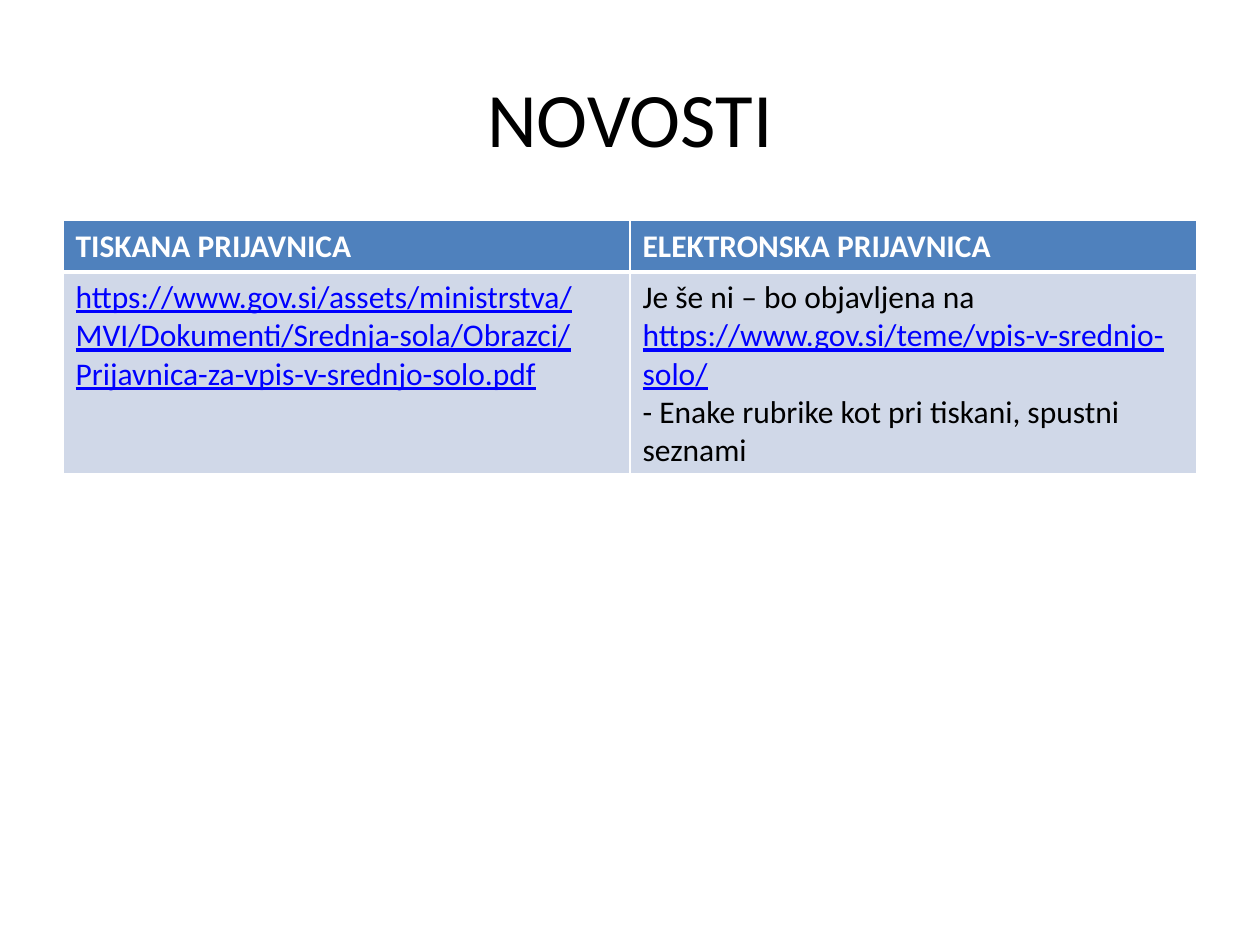
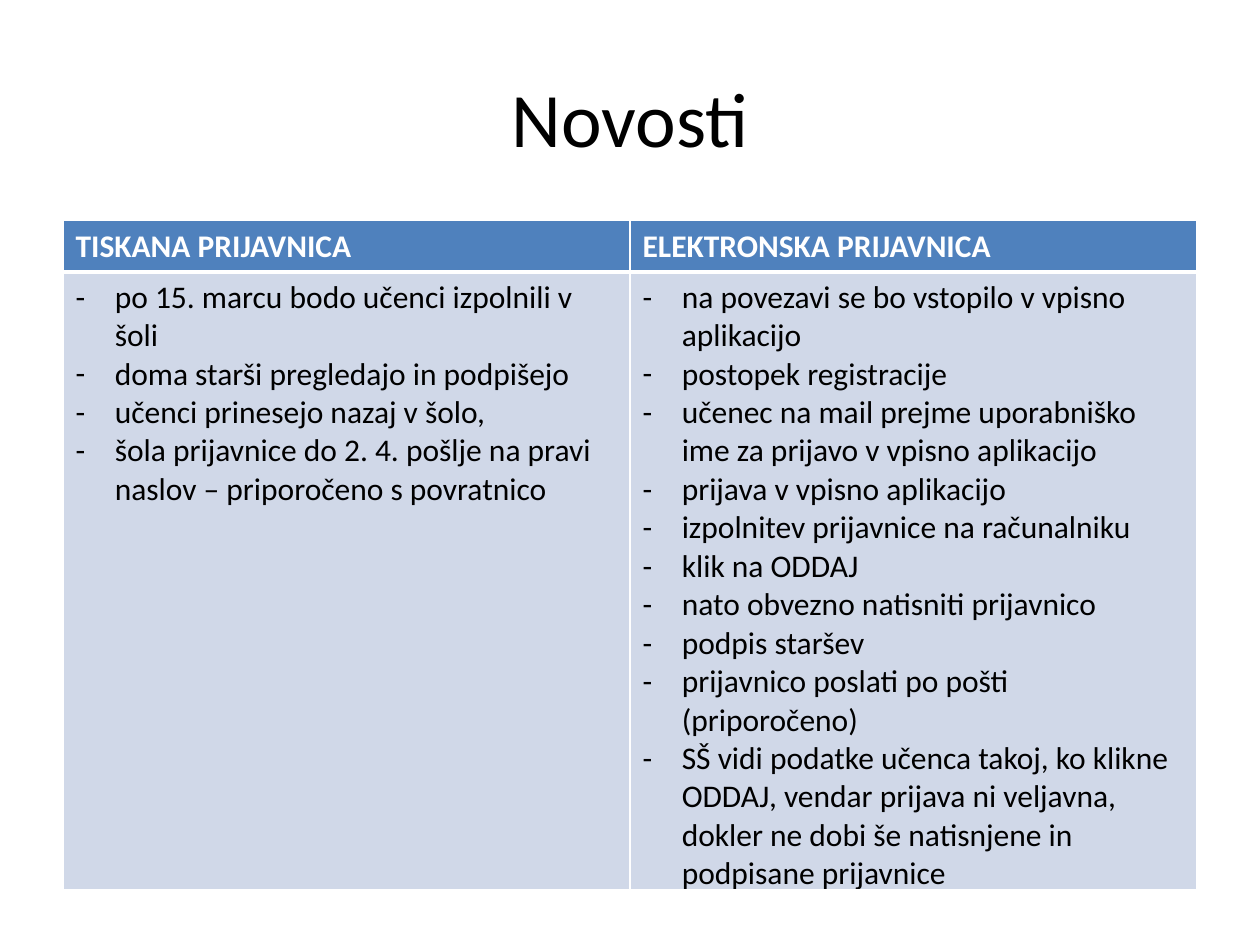
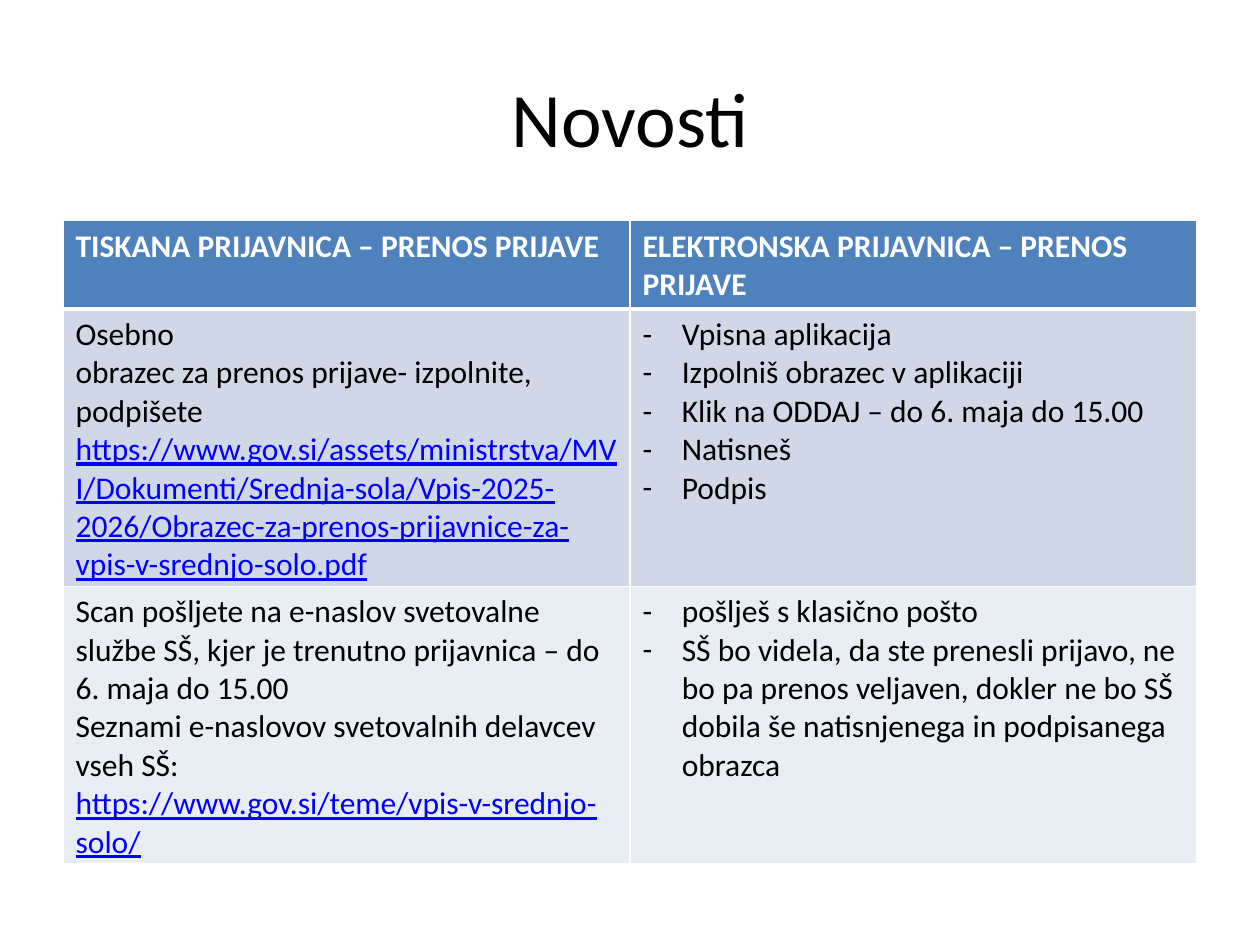
from dataclasses import dataclass

from lxml import etree
from pptx import Presentation
from pptx import util as u
from pptx.dml.color import RGBColor
from pptx.enum import text
from pptx.oxml import ns


@dataclass(frozen=True)
class Theme:
    font: str = "Calibri"
    title_size: float = 44
    body_size: float = 18
    ink: str = "000000"
    white: str = "FFFFFF"
    link: str = "0000FF"
    header: str = "4F81BD"
    bands: tuple[str, ...] = ("D0D8E8", "E9EDF4")
    thin: float = 1
    thick: float = 3


@dataclass(frozen=True)
class Line:
    """One paragraph: plain words, then an optional web address."""
    words: str = ""
    link: str = ""
    bullet: bool = False


@dataclass(frozen=True)
class Page:
    title: str
    headers: tuple[str, ...]
    rows: tuple[tuple[list[Line], ...], ...]


THEME = Theme()

# Shared layout
SLIDE_W, SLIDE_H = u.Cm(25.4), u.Cm(19.05)
LEFT, WIDTH = u.Cm(1.27), u.Cm(22.86)
TITLE_TOP, TITLE_H = u.Cm(0.76), u.Cm(3.18)
TABLE_TOP, ROW_H = u.Cm(4.45), u.Cm(1.03)
INDENT = u.Cm(0.79)


def bullets(*items: str) -> list[Line]:
    return [Line(item, bullet=True) for item in items]


# Content
SITE = "https://www.gov.si/"
FORMS = SITE + "assets/ministrstva/MVI/Dokumenti/Srednja-sola/"
ENROLMENT = SITE + "teme/vpis-v-srednjo-solo/"
PRINTED, ELECTRONIC = "TISKANA PRIJAVNICA", "ELEKTRONSKA PRIJAVNICA"
TRANSFER = " – PRENOS PRIJAVE"

PAGES = [
    Page("NOVOSTI", (PRINTED, ELECTRONIC), (
        ([Line(link=FORMS + "Obrazci/Prijavnica-za-vpis-v-srednjo-solo.pdf")],
         [Line("Je še ni – bo objavljena na ", ENROLMENT),
          Line("- Enake rubrike kot pri tiskani, spustni seznami")]),
    )),
    Page("Novosti", (PRINTED, ELECTRONIC), (
        (bullets(
            "po 15. marcu bodo učenci izpolnili v šoli",
            "doma starši pregledajo in podpišejo",
            "učenci prinesejo nazaj v šolo,",
            "šola prijavnice do 2. 4. pošlje na pravi naslov – priporočeno s povratnico"),
         bullets(
            "na povezavi se bo vstopilo v vpisno aplikacijo",
            "postopek registracije",
            "učenec na mail prejme uporabniško ime za prijavo v vpisno aplikacijo",
            "prijava v vpisno aplikacijo",
            "izpolnitev prijavnice na računalniku",
            "klik na ODDAJ",
            "nato obvezno natisniti prijavnico",
            "podpis staršev",
            "prijavnico poslati po pošti (priporočeno)",
            "SŠ vidi podatke učenca takoj, ko klikne ODDAJ, vendar prijava ni veljavna, "
            "dokler ne dobi še natisnjene in podpisane prijavnice")),
    )),
    Page("Novosti", (PRINTED + TRANSFER, ELECTRONIC + TRANSFER), (
        ([Line("Osebno"),
          Line("obrazec za prenos prijave- izpolnite, podpišete ",
               FORMS + "Vpis-2025-2026/Obrazec-za-prenos-prijavnice-za-vpis-v-srednjo-solo.pdf")],
         bullets(
            "Vpisna aplikacija",
            "Izpolniš obrazec v aplikaciji",
            "Klik na ODDAJ – do 6. maja do 15.00",
            "Natisneš",
            "Podpis")),
        ([Line("Scan pošljete na e-naslov svetovalne službe SŠ, kjer je trenutno prijavnica "
               "– do 6. maja do 15.00"),
          Line("Seznami e-naslovov svetovalnih delavcev vseh SŠ:"),
          Line(link=ENROLMENT)],
         bullets(
            "pošlješ s klasično pošto",
            "SŠ bo videla, da ste prenesli prijavo, ne bo pa prenos veljaven, dokler ne bo SŠ "
            "dobila še natisnjenega in podpisanega obrazca")),
    )),
]


def style_run(r, size: float, color: str, bold: bool = False, underline: bool = False) -> None:
    r.font.name = THEME.font
    r.font.size = u.Pt(size)
    r.font.color.rgb = RGBColor.from_string(color)
    r.font.bold = bold
    r.font.underline = underline


def set_bullet(p) -> None:
    pPr = p._p.get_or_add_pPr()
    pPr.set("marL", str(INDENT))
    pPr.set("indent", str(-INDENT))
    etree.SubElement(pPr, ns.qn("a:buFont"), typeface=THEME.font)
    etree.SubElement(pPr, ns.qn("a:buChar"), char="-")


def set_borders(cell, top: float, bottom: float) -> None:
    tcPr = cell._tc.get_or_add_tcPr()
    widths = {"lnL": THEME.thin, "lnR": THEME.thin, "lnT": top, "lnB": bottom}
    for i, (side, width) in enumerate(widths.items()):
        ln = etree.Element(ns.qn(f"a:{side}"), w=str(u.Pt(width)))
        fill = etree.SubElement(ln, ns.qn("a:solidFill"))
        etree.SubElement(fill, ns.qn("a:srgbClr"), val=THEME.white)
        tcPr.insert(i, ln)


def fill_cell(cell, lines: list[Line], fill: str, color: str, bold: bool = False) -> None:
    cell.fill.solid()
    cell.fill.fore_color.rgb = RGBColor.from_string(fill)
    tf = cell.text_frame
    tf.text = "\n".join(line.words for line in lines)
    for p, line in zip(tf.paragraphs, lines):
        for r in p.runs:
            style_run(r, THEME.body_size, color, bold)
        if line.link:
            r = p.add_run()
            r.text = line.link
            style_run(r, THEME.body_size, THEME.link, underline=True)
        if line.bullet:
            set_bullet(p)


def add_title(s, title: str) -> None:
    tf = s.shapes.add_textbox(LEFT, TITLE_TOP, WIDTH, TITLE_H).text_frame
    tf.word_wrap = True
    tf.vertical_anchor = text.MSO_ANCHOR.MIDDLE
    tf.text = title
    p = tf.paragraphs[0]
    p.alignment = text.PP_ALIGN.CENTER
    style_run(p.runs[0], THEME.title_size, THEME.ink)


def add_comparison(s, page: Page) -> None:
    n_rows = len(page.rows) + 1
    table = s.shapes.add_table(n_rows, len(page.headers), LEFT, TABLE_TOP,
                               WIDTH, ROW_H * n_rows).table
    # Header row
    for col, header in enumerate(page.headers):
        cell = table.cell(0, col)
        fill_cell(cell, [Line(header)], THEME.header, THEME.white, bold=True)
        set_borders(cell, THEME.thin, THEME.thick)
    # Banded body rows
    for row, cells in enumerate(page.rows):
        for col, lines in enumerate(cells):
            cell = table.cell(row + 1, col)
            fill_cell(cell, lines, THEME.bands[row % len(THEME.bands)], THEME.ink)
            set_borders(cell, THEME.thin if row else THEME.thick, THEME.thin)


def main() -> None:
    prs = Presentation()
    prs.slide_width, prs.slide_height = SLIDE_W, SLIDE_H
    for page in PAGES:
        s = prs.slides.add_slide(prs.slide_layouts[6])
        add_title(s, page.title)
        add_comparison(s, page)
    prs.save("out.pptx")


if __name__ == "__main__":
    main()
